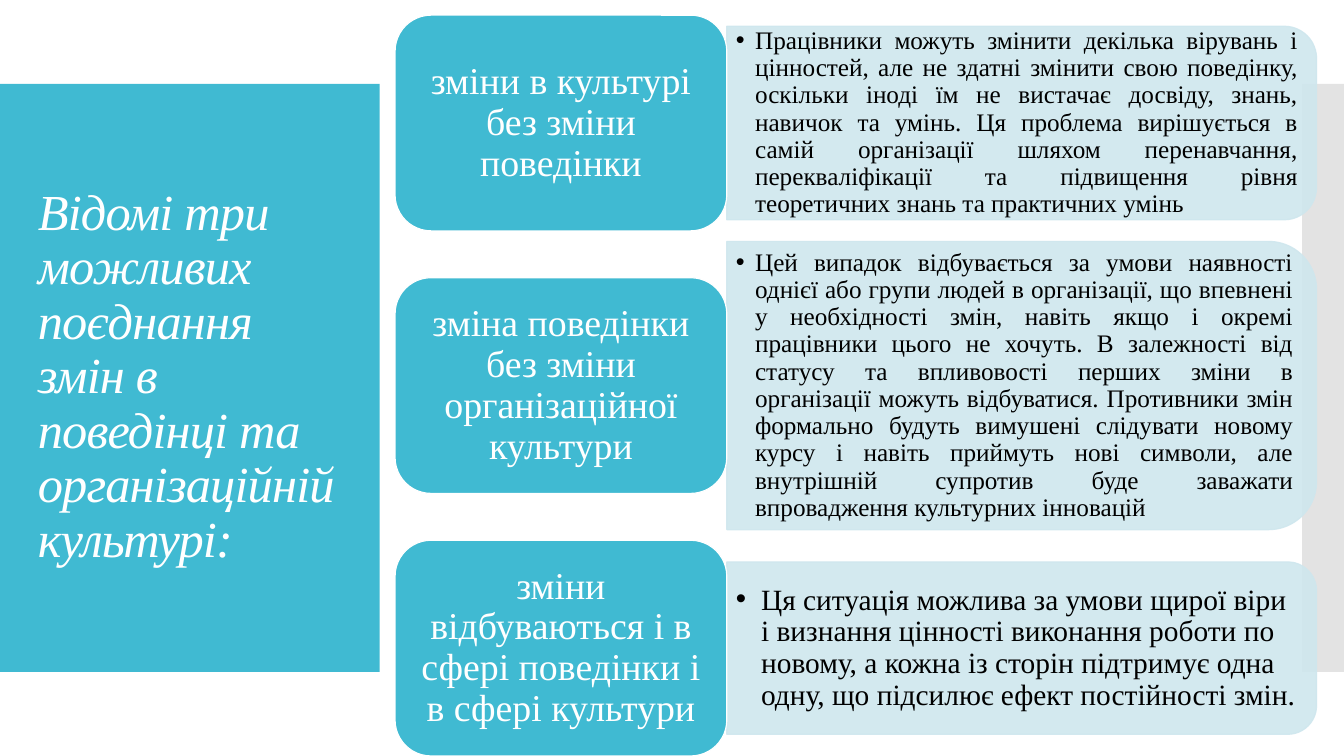
from lxml import etree
from pptx import Presentation
from pptx.dml.color import RGBColor
from pptx.enum.shapes import MSO_SHAPE as Shape
from pptx.enum.text import MSO_ANCHOR as Anchor, PP_ALIGN as Align
from pptx.oxml.ns import qn
from pptx.util import Inches, Pt

WIDTH, HEIGHT = Inches(13.33), Inches(7.5)
TEAL = RGBColor(0x40, 0xBA, 0xD2)
PALE = RGBColor(0xCF, 0xE7, 0xEE)
GREY = RGBColor(0xC8, 0xC8, 0xC8)
WHITE = RGBColor(0xFF, 0xFF, 0xFF)
BLACK = RGBColor(0x00, 0x00, 0x00)
FONT = "Times New Roman"
CORNER_INSET = 0.05

TITLE = "Відомі три можливих поєднання змін в\nповедінці та організаційній культурі:"
ROWS = [
    ("зміни в культурі без зміни поведінки",
     "Працівники можуть змінити декілька вірувань і цінностей, але не здатні "
     "змінити свою поведінку, оскільки іноді їм не вистачає досвіду, знань, "
     "навичок та умінь. Ця проблема вирішується в самій організації шляхом "
     "перенавчання, перекваліфікації та підвищення рівня теоретичних знань та "
     "практичних умінь",
     25.6, 18, 0.19, Align.JUSTIFY),
    ("зміна поведінки без зміни організаційної культури",
     "Цей випадок відбувається за умови наявності однієї або групи людей в "
     "організації, що впевнені у необхідності змін, навіть якщо і окремі "
     "працівники цього не хочуть. В залежності від статусу та впливовості "
     "перших зміни в організації можуть відбуватися. Противники змін формально "
     "будуть вимушені слідувати новому курсу і навіть приймуть нові символи, "
     "але внутрішній супротив буде заважати впровадження культурних інновацій",
     38.13, 18, 0.19, Align.JUSTIFY),
    ("зміни відбуваються і в сфері поведінки і в сфері культури",
     "Ця ситуація можлива за умови щирої віри і визнання цінності виконання "
     "роботи по новому, а кожна із сторін підтримує одна одну, що підсилює "
     "ефект постійності змін.",
     22.8, 21, 0.25, Align.LEFT),
]


def across(percent):
    return round(WIDTH * percent / 100)


def down(percent):
    return round(HEIGHT * percent / 100)


PILL_LEFT, PILL_WIDTH, PILL_HEIGHT = across(29.4), across(24.68), down(28.53)
CARD_LEFT, CARD_LENGTH = across(54.08), across(43.88)
FIRST_CENTRE, ROW_PITCH = down(16.27), down(34.73)


def set_alpha(fill, percent):
    color = fill._xPr.find(qn("a:solidFill"))[0]
    etree.SubElement(color, qn("a:alpha"), val=str(percent * 1000))


def add_block(slide, kind, box, color, line=None, alpha=100):
    shape = slide.shapes.add_shape(kind, *box)
    shape.shadow.inherit = False
    shape.fill.solid()
    shape.fill.fore_color.rgb = color
    if line is None:
        shape.line.fill.background()
    else:
        shape.line.color.rgb = line
        shape.line.width = Pt(0.85)
    if alpha < 100:
        set_alpha(shape.fill, alpha)
        if line is not None:
            set_alpha(shape.line.fill, alpha)
    return shape


def write(shape, text, size, color, align, margins):
    frame = shape.text_frame
    frame.word_wrap = True
    frame.vertical_anchor = Anchor.MIDDLE
    frame.margin_left = frame.margin_right = Inches(margins[0])
    frame.margin_top = frame.margin_bottom = Inches(margins[1])
    paragraph = frame.paragraphs[0]
    paragraph.text = text
    paragraph.alignment = align
    paragraph.line_spacing = 0.9
    for run in paragraph.runs:
        run.font.name = FONT
        run.font.size = Pt(size)
        run.font.color.rgb = color
    return paragraph


def add_bullet(paragraph, indent):
    properties = paragraph._p.get_or_add_pPr()
    properties.set("marL", str(Inches(indent)))
    properties.set("indent", str(-Inches(indent)))
    etree.SubElement(properties, qn("a:buFont"), typeface="Arial")
    etree.SubElement(properties, qn("a:buChar"), char="•")


def add_title(slide):
    box = slide.shapes.add_textbox(across(2.08), down(16.4), across(24.15), down(67.07))
    paragraph = write(box, TITLE, 36, WHITE, Align.LEFT, (0.1, 0.05))
    for run in paragraph.runs:
        run.font.italic = True
        run.font._element.set("spc", "-60")


def add_card(slide, centre, text, height, size, indent, align):
    middle = CARD_LEFT + CARD_LENGTH // 2
    box = (middle - height // 2, centre - CARD_LENGTH // 2, height, CARD_LENGTH)
    card = add_block(slide, Shape.ROUND_2_SAME_RECTANGLE, box, PALE, PALE, 90)
    card.rotation = 90
    inset = round(height * CORNER_INSET)
    label = slide.shapes.add_textbox(CARD_LEFT, centre - height // 2 + inset,
                                     CARD_LENGTH - inset, height - 2 * inset)
    add_bullet(write(label, text, size, BLACK, align, (0.09, 0.04)), indent)


def add_pill(slide, centre, text):
    box = (PILL_LEFT, centre - PILL_HEIGHT // 2, PILL_WIDTH, PILL_HEIGHT)
    pill = add_block(slide, Shape.ROUNDED_RECTANGLE, box, TEAL, WHITE)
    write(pill, text, 27, WHITE, Align.CENTER, (0.11, 0.06))


def main():
    presentation = Presentation()
    presentation.slide_width, presentation.slide_height = WIDTH, HEIGHT
    slide = presentation.slides.add_slide(presentation.slide_layouts[6])
    top, height = down(11.11), down(77.78)
    add_block(slide, Shape.RECTANGLE, (0, top, across(28.25), height), TEAL)
    add_block(slide, Shape.RECTANGLE, (across(96.88), top, across(3.12), height),
              GREY, alpha=50)
    add_title(slide)
    for index, (heading, text, share, size, indent, align) in enumerate(ROWS):
        centre = FIRST_CENTRE + index * ROW_PITCH
        add_card(slide, centre, text, down(share), size, indent, align)
        add_pill(slide, centre, heading)
    presentation.save("out.pptx")


if __name__ == "__main__":
    main()
